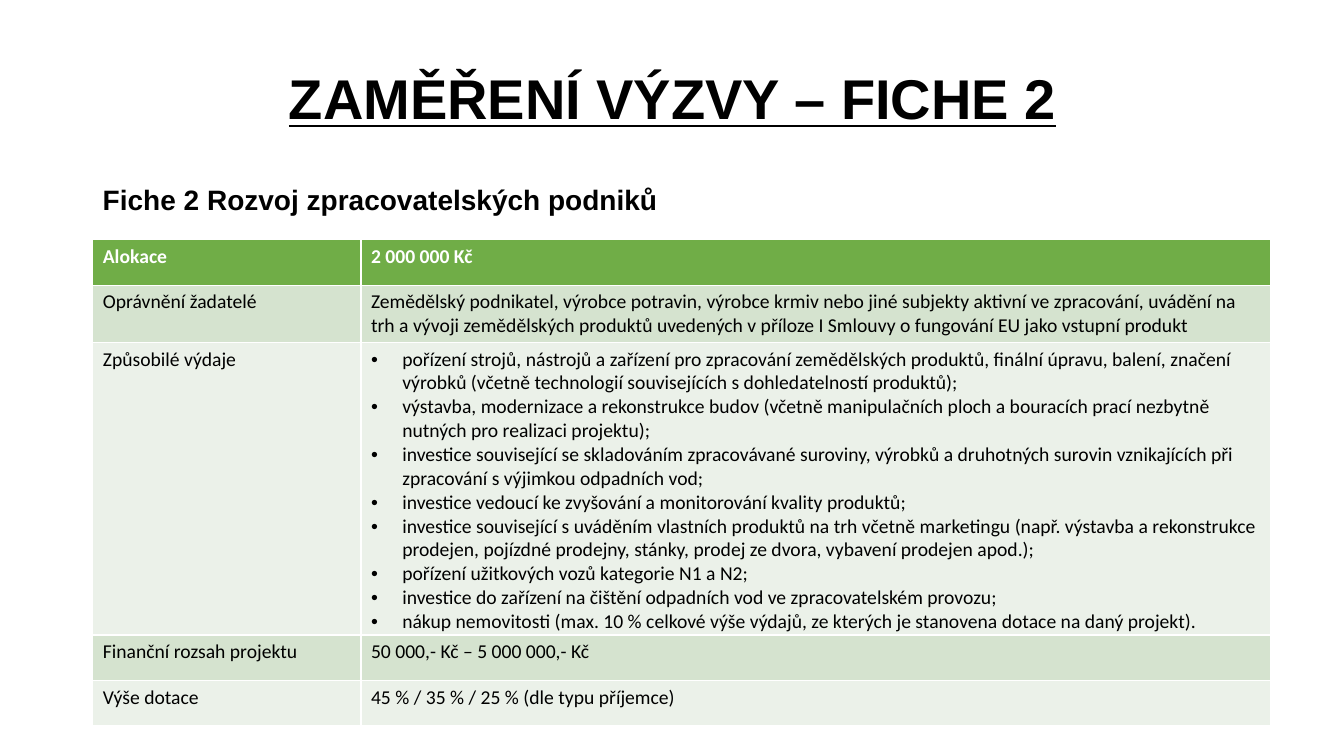
"""Build the slide on the focus of the call, Fiche 2."""
from lxml.etree import SubElement
from pptx import Presentation
from pptx.dml.color import RGBColor
from pptx.enum.text import MSO_ANCHOR as Anchor, MSO_AUTO_SIZE as AutoSize, PP_ALIGN as Align
from pptx.oxml.ns import qn
from pptx.util import Inches, Pt


def color(hex_value):
    return RGBColor.from_string(hex_value)


def write(paragraph, text, hex_value, formats):
    run = paragraph.add_run()
    run.text = text
    run.font.color.rgb = color(hex_value)
    for name, value in formats.items():
        setattr(run.font, name, value)


deck = Presentation()
deck.slide_width, deck.slide_height = Inches(13.33), Inches(7.5)
slide = deck.slides.add_slide(deck.slide_layouts[6])

headings = [
    ("ZAMĚŘENÍ VÝZVY – FICHE 2", (0.92, 0.4, 11.5, 1.22),
     {"vertical_anchor": Anchor.MIDDLE, "word_wrap": True}, Align.CENTER,
     {"size": Pt(40), "name": "Arial", "bold": True, "underline": True}),
    ("Fiche 2 Rozvoj zpracovatelských podniků", (0.92, 1.8, 5.75, 0.4),
     {"word_wrap": False, "auto_size": AutoSize.SHAPE_TO_FIT_TEXT}, Align.LEFT,
     {"size": Pt(20), "name": "Arial", "bold": True}),
]
for text, place, frame_formats, alignment, font_formats in headings:
    heading = slide.shapes.add_textbox(*map(Inches, place)).text_frame
    for name, value in frame_formats.items():
        setattr(heading, name, value)
    line = heading.paragraphs[0]
    line.alignment = alignment
    line.line_spacing = 0.9
    write(line, text, "000000", font_formats)

eligible_costs = [
    "pořízení strojů, nástrojů a zařízení pro zpracování zemědělských produktů, finální úpravu, "
    "balení, značení výrobků (včetně technologií souvisejících s dohledatelností produktů);",
    "výstavba, modernizace a rekonstrukce budov (včetně manipulačních ploch a bouracích prací "
    "nezbytně nutných pro realizaci projektu);",
    "investice související se skladováním zpracovávané suroviny, výrobků a druhotných surovin "
    "vznikajících při zpracování s výjimkou odpadních vod;",
    "investice vedoucí ke zvyšování a monitorování kvality produktů;",
    "investice související s uváděním vlastních produktů na trh včetně marketingu (např. výstavba "
    "a rekonstrukce prodejen, pojízdné prodejny, stánky, prodej ze dvora, vybavení prodejen apod.);",
    "pořízení užitkových vozů kategorie N1 a N2;",
    "investice do zařízení na čištění odpadních vod ve zpracovatelském provozu;",
    "nákup nemovitosti (max. 10 % celkové výše výdajů, ze kterých je stanovena dotace na daný projekt).",
]
conditions = [
    ("Alokace", ["2 000 000 Kč"], 0.45),
    ("Oprávnění žadatelé",
     ["Zemědělský podnikatel, výrobce potravin, výrobce krmiv nebo jiné subjekty aktivní ve "
      "zpracování, uvádění na trh a vývoji zemědělských produktů uvedených v příloze I Smlouvy "
      "o fungování EU jako vstupní produkt"], 0.55),
    ("Způsobilé výdaje", eligible_costs, 2.76),
    ("Finanční rozsah projektu", ["50 000,- Kč – 5 000 000,- Kč"], 0.45),
    ("Výše dotace", ["45 % / 35 % / 25 % (dle typu příjemce)"], 0.45),
]
conditions_frame = slide.shapes.add_table(
    len(conditions), 2, Inches(0.92), Inches(2.38), Inches(11.68), Inches(4.81))
conditions_table = conditions_frame.table
for column, width in zip(conditions_table.columns, (2.66, 9.02)):
    column.width = Inches(width)

for row, (label, details, height) in enumerate(conditions):
    conditions_table.rows[row].height = Inches(height)
    is_header = row == 0
    band = "70AD47" if is_header else ("EBF1E9", "D5E3CF")[row % 2]
    ink = "FFFFFF" if is_header else "000000"
    for column, entries in enumerate(([label], details)):
        cell = conditions_table.cell(row, column)
        cell.fill.solid()
        cell.fill.fore_color.rgb = color(band)
        for index, entry in enumerate(entries):
            frame = cell.text_frame
            paragraph = frame.add_paragraph() if index else frame.paragraphs[0]
            if len(entries) > 1:
                properties = paragraph._p.get_or_add_pPr()
                properties.set("marL", str(Inches(0.31)))
                properties.set("indent", str(-Inches(0.31)))
                SubElement(properties, qn("a:buFont"), typeface="Arial")
                SubElement(properties, qn("a:buChar"), char="•")
            write(paragraph, entry, ink,
                  {"size": Pt(14), "name": "Calibri", "bold": is_header})
conditions_frame.height = Inches(4.81)

deck.save("out.pptx")
